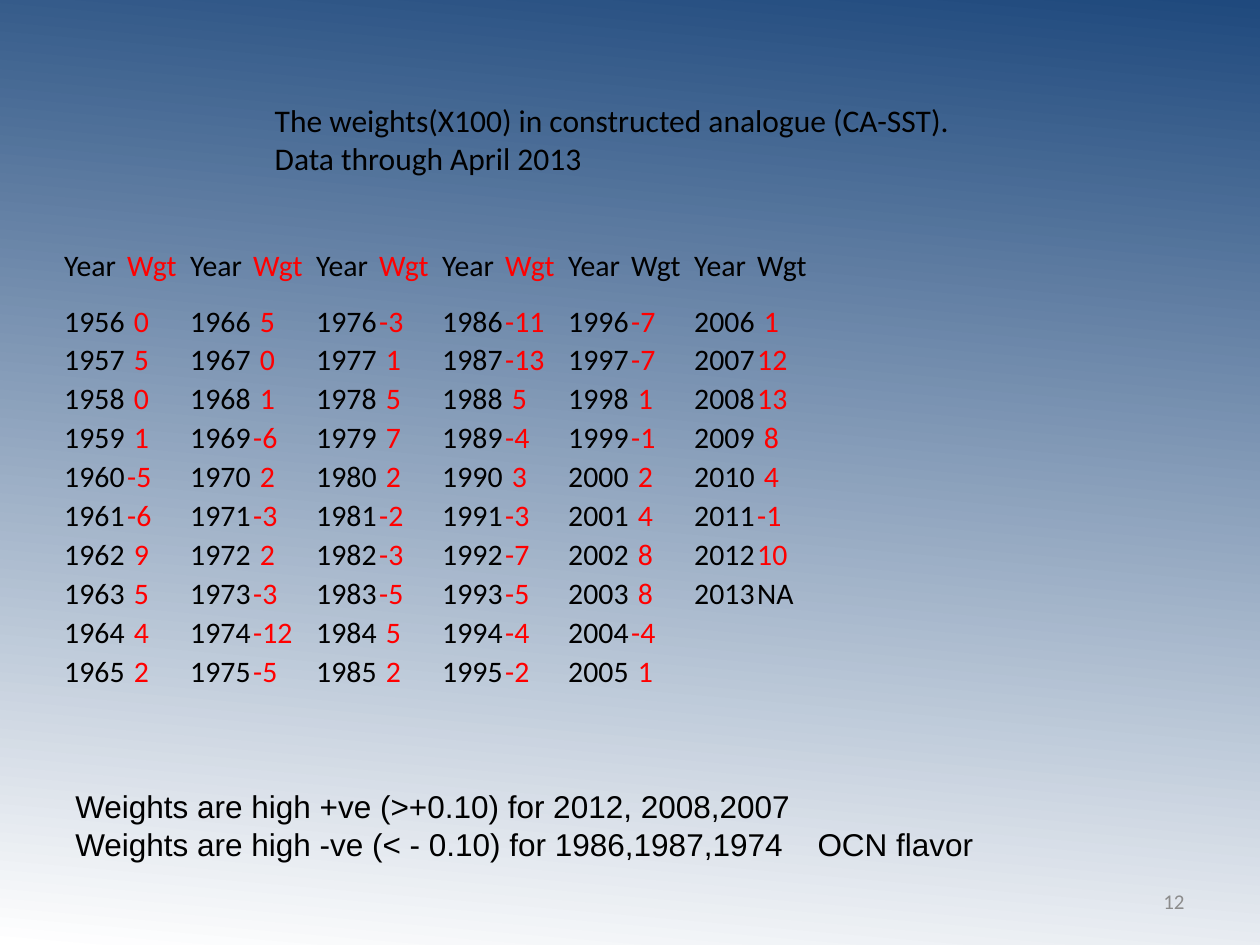
from lxml import etree
from pptx import Presentation
from pptx import util as u
from pptx.dml.color import RGBColor
from pptx.enum import text
from pptx.oxml.ns import qn

WIDTH, HEIGHT = 10, 7.5
BLACK = RGBColor(0x00, 0x00, 0x00)
RED = RGBColor(0xFF, 0x00, 0x00)
GREY = RGBColor(0x8C, 0x8C, 0x8C)
WHITE = RGBColor(0xFF, 0xFF, 0xFF)
NAVY = RGBColor(0x1F, 0x49, 0x7D)

NO_GRID_STYLE = "{2D5ABB26-0587-4C30-8999-92F81FD0307C}"
FIRST_YEAR = 1956
ROWS_PER_DECADE = 10
RED_HEADERS = 4
COLUMN, HEADER_ROW, YEAR_ROW = 0.5, 0.57, 0.29
CELL_MARGIN = u.Inches(0.01)

# One list of weights (x100) for each pair of columns
WEIGHTS = [
    [0, 5, 0, 1, -5, -6, 9, 5, 4, 2],
    [5, 0, 1, -6, 2, -3, 2, -3, -12, -5],
    [-3, 1, 5, 7, 2, -2, -3, -5, 5, 2],
    [-11, -13, 5, -4, 3, -3, -7, -5, -4, -2],
    [-7, -7, 1, -1, 2, 4, 8, 8, -4, 1],
    [1, 12, 13, 8, 4, -1, 10, "NA"],
]


def paint_background(page):
    fill = page.background.fill
    fill.gradient()
    fill.gradient_angle = 85
    for stop, position, color in zip(fill.gradient_stops, (0, 1), (WHITE, NAVY)):
        stop.position = position
        stop.color.rgb = color


def format_paragraph(para, size, font, color, align=text.PP_ALIGN.LEFT):
    para.alignment = align
    para.font.size = u.Pt(size)
    para.font.name = font
    para.font.color.rgb = color


def fill_box(box, place, lines, anchor, size, font, color=BLACK,
             align=text.PP_ALIGN.LEFT):
    box.left, box.top, box.width, box.height = map(u.Inches, place)
    frame = box.text_frame
    frame.word_wrap = True
    frame.auto_size = text.MSO_AUTO_SIZE.NONE
    frame.vertical_anchor = anchor
    frame.text = "\n".join(lines)
    for para in frame.paragraphs:
        format_paragraph(para, size, font, color, align)
    return frame


def add_box(page, *args, **options):
    return fill_box(page.shapes.add_textbox(0, 0, 0, 0), *args, **options)


def add_tab_stop(para, inches):
    properties = para._p.get_or_add_pPr()
    tabs = etree.Element(qn("a:tabLst"))
    etree.SubElement(tabs, qn("a:tab"), pos=str(u.Inches(inches)), algn="l")
    properties.find(qn("a:defRPr")).addprevious(tabs)


def set_cell(cell, value="", color=BLACK):
    cell.fill.background()
    cell.vertical_anchor = text.MSO_ANCHOR.MIDDLE
    cell.margin_left = cell.margin_right = CELL_MARGIN
    cell.margin_top = cell.margin_bottom = CELL_MARGIN
    cell.text = value
    format_paragraph(cell.text_frame.paragraphs[0], 17, "Calibri", color)


def add_weight_table(page, left, top):
    rows, columns = ROWS_PER_DECADE + 1, 2 * len(WEIGHTS)
    height = HEADER_ROW + ROWS_PER_DECADE * YEAR_ROW
    table = page.shapes.add_table(
        rows, columns, u.Inches(left), u.Inches(top),
        u.Inches(columns * COLUMN), u.Inches(height)).table
    table.horz_banding = table.first_row = False
    table._tbl.tblPr.find(qn("a:tableStyleId")).text = NO_GRID_STYLE
    for index, row in enumerate(table.rows):
        row.height = u.Inches(YEAR_ROW if index else HEADER_ROW)
    for cell in table.iter_cells():
        set_cell(cell)

    for decade, weights in enumerate(WEIGHTS):
        year_column, weight_column = 2 * decade, 2 * decade + 1
        set_cell(table.cell(0, year_column), "Year")
        set_cell(table.cell(0, weight_column), "Wgt",
                 RED if decade < RED_HEADERS else BLACK)
        for row, weight in enumerate(weights, start=1):
            year = FIRST_YEAR + decade * ROWS_PER_DECADE + row - 1
            set_cell(table.cell(row, year_column), str(year))
            set_cell(table.cell(row, weight_column), f"{weight:>2}",
                     BLACK if weight == "NA" else RED)


def main():
    deck = Presentation()
    deck.slide_width, deck.slide_height = u.Inches(WIDTH), u.Inches(HEIGHT)
    page = deck.slides.add_slide(deck.slide_layouts[5])
    paint_background(page)

    # Title
    fill_box(page.shapes.title, (2.08, 0.75, 5.62, 0.71),
             ["The weights(X100) in constructed analogue (CA-SST).",
              "Data through April 2013"],
             text.MSO_ANCHOR.TOP, 18, "Calibri")

    # Page number
    add_box(page, (7.17, 6.95, 2.33, 0.4), ["12"], text.MSO_ANCHOR.MIDDLE,
            12, "Calibri", GREY, text.PP_ALIGN.RIGHT)

    # Weights by year
    add_weight_table(page, 0.5, 1.83)

    # Remarks
    remarks = add_box(
        page, (0.5, 5.91, 7.4, 1.01),
        ["Weights are high +ve (>+0.10) for 2012, 2008,2007",
         "Weights are high -ve (< - 0.10) for 1986,1987,1974\tOCN flavor"],
        text.MSO_ANCHOR.BOTTOM, 18, "Arial")
    remarks.margin_bottom = u.Inches(0.07)
    add_tab_stop(remarks.paragraphs[-1], 5.89)

    deck.save("out.pptx")


if __name__ == "__main__":
    main()
